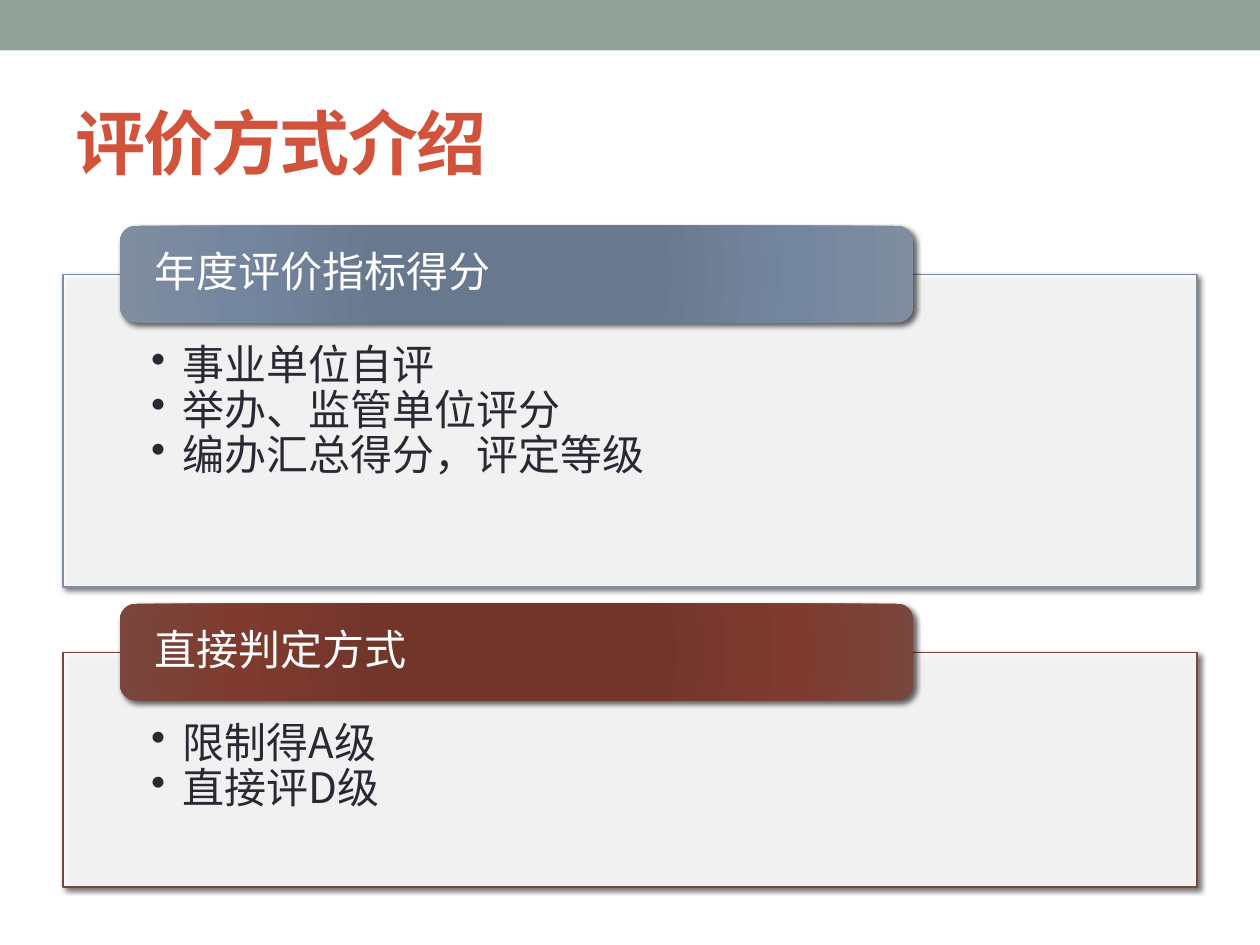
from dataclasses import dataclass

from lxml import etree
from pptx import Presentation
from pptx import util as u
from pptx.dml.color import RGBColor
from pptx.enum import shapes, text
from pptx.oxml.ns import qn

FONT = "Noto Sans CJK SC"
COLORS = {"band": "93A299", "title": "D2533C", "body": "292934", "white": "FFFFFF",
          "shadow": "000000", "blue": "808DA0", "red": "79463D"}


@dataclass
class Section:
    """A headed panel with its bullet points."""
    heading: str
    points: list[str]
    top: float
    height: float
    edge: str
    stops: list[tuple[int, str]]


SECTIONS = [
    Section("年度评价指标得分", ["事业单位自评", "举办、监管单位评分", "编办汇总得分，评定等级"],
            2.18, 2.48, "blue", [(0, "677790"), (34, "68788E"), (70, "74869F"), (100, "808DA0")]),
    Section("直接判定方式", ["限制得A级", "直接评D级"],
            5.18, 1.86, "red", [(0, "743327"), (34, "72352A"), (70, "7F3B2F"), (100, "79463D")]),
]


def add_child(parent, tag: str, **attributes):
    """Append a DrawingML element with the given attributes."""
    return etree.SubElement(parent, qn(tag), {k: str(v) for k, v in attributes.items()})


def add_color(parent, color: str, alpha: int = 100) -> None:
    """Append a colour, with its opacity in percent."""
    node = add_child(parent, "a:srgbClr", val=color)
    if alpha < 100:
        add_child(node, "a:alpha", val=alpha * 1000)


def add_box(slide, kind, left: float, top: float, width: float, height: float, fill: str):
    """Draw a filled preset shape without line or shadow."""
    box = slide.shapes.add_shape(kind, *map(u.Inches, (left, top, width, height)))
    box.fill.solid()
    box.fill.fore_color.rgb = RGBColor.from_string(fill)
    box.line.fill.background()
    box.shadow.inherit = False
    return box


def cast_shadow(box) -> None:
    """Give a shape a soft shadow towards the lower right."""
    effects = box._element.spPr.find(qn("a:effectLst"))
    shadow = add_child(effects, "a:outerShdw", blurRad=u.Pt(3), dist=u.Pt(2),
                       dir=45 * 60000, algn="tl", rotWithShape=0)
    add_color(shadow, COLORS["shadow"], 60)


def fill_radial(box, stops: list[tuple[int, str]]) -> None:
    """Replace a solid fill with a circular gradient."""
    solid = box._element.spPr.find(qn("a:solidFill"))
    gradient = etree.Element(qn("a:gradFill"), rotWithShape="1")
    stop_list = add_child(gradient, "a:gsLst")
    for position, color in stops:
        add_color(add_child(stop_list, "a:gs", pos=position * 1000), color)
    circle = add_child(gradient, "a:path", path="circle")
    add_child(circle, "a:fillToRect", **dict.fromkeys("ltrb", 100000))
    solid.getparent().replace(solid, gradient)


def write(box, lines: list[str], size: int, color: str, anchor, insets=(0.1, 0.05, 0.1, 0.05),
          bold: bool = False, spacing: float = 1.0, bulleted: bool = False,
          tracking: int = 0) -> None:
    """Write left-aligned paragraphs into a shape."""
    frame = box.text_frame
    left, top, right, bottom = map(u.Inches, insets)
    frame_format = {"word_wrap": True, "vertical_anchor": anchor, "margin_left": left,
                    "margin_top": top, "margin_right": right, "margin_bottom": bottom}
    for name, value in frame_format.items():
        setattr(frame, name, value)
    for index, line in enumerate(lines):
        paragraph = frame.paragraphs[0] if index == 0 else frame.add_paragraph()
        paragraph.alignment = text.PP_ALIGN.LEFT
        paragraph.line_spacing = spacing
        if bulleted:
            properties = paragraph._p.get_or_add_pPr()
            properties.set("marL", str(u.Inches(0.25)))
            properties.set("indent", str(u.Inches(-0.25)))
            add_child(properties, "a:buChar", char="•")
        run = paragraph.add_run()
        run.text = line
        for name, value in {"name": FONT, "size": u.Pt(size), "bold": bold}.items():
            setattr(run.font, name, value)
        run.font.color.rgb = RGBColor.from_string(COLORS[color])
        run_properties = run._r.get_or_add_rPr()
        add_child(run_properties, "a:ea", typeface=FONT)
        if tracking:
            run_properties.set("spc", str(tracking * 100))


def draw_section(slide, section: Section) -> None:
    """Draw a panel and the heading tab that overlaps its top edge."""
    panel = add_box(slide, shapes.MSO_SHAPE.RECTANGLE, 0.5, section.top, 9, section.height,
                    COLORS["white"])
    add_child(panel._element.spPr.find(qn("a:solidFill"))[0], "a:alpha", val=90000)
    panel.line.color.rgb = RGBColor.from_string(COLORS[section.edge])
    panel.line.width = u.Pt(0.75)
    cast_shadow(panel)
    write(panel, section.points, 24, "body", text.MSO_ANCHOR.TOP, (0.7, 0.55, 0.7, 0.19),
          spacing=0.9, bulleted=True)

    tab = add_box(slide, shapes.MSO_SHAPE.ROUNDED_RECTANGLE, 0.95, section.top - 0.39,
                  6.3, 0.77, COLORS[section.edge])
    fill_radial(tab, section.stops)
    cast_shadow(tab)
    write(tab, [section.heading], 24, "white", text.MSO_ANCHOR.MIDDLE, (0.24, 0, 0.24, 0),
          spacing=0.9)


def main() -> None:
    """Build the slide and save it."""
    deck = Presentation()
    deck.slide_width, deck.slide_height = u.Inches(10), u.Inches(7.5)
    slide = deck.slides.add_slide(deck.slide_layouts[6])
    add_box(slide, shapes.MSO_SHAPE.RECTANGLE, 0, 0, 10, 0.4, COLORS["band"])
    title = slide.shapes.add_textbox(*map(u.Inches, (0.5, 0.58, 9, 1.08)))
    write(title, ["评价方式介绍"], 40, "title", text.MSO_ANCHOR.MIDDLE, bold=True, tracking=-1)
    for section in SECTIONS:
        draw_section(slide, section)
    deck.save("out.pptx")


if __name__ == "__main__":
    main()
